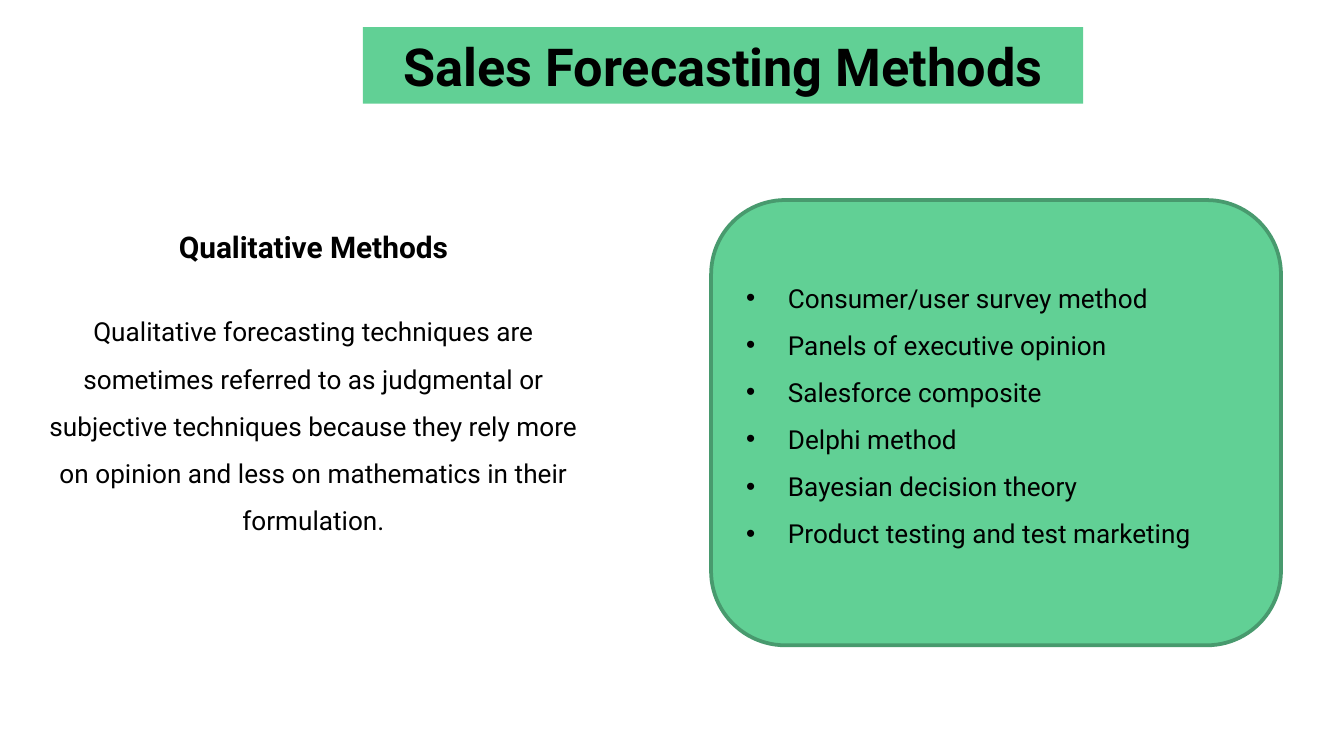
from dataclasses import dataclass

import pptx
import pptx.dml.color
import pptx.enum.shapes
import pptx.enum.text
import pptx.oxml
import pptx.oxml.ns
import pptx.util
from pptx.util import Cm

COLORS = {"green": "61D095", "dark_green": "489A6E", "text": "000000"}
FONT = "Roboto"
ALIGN = pptx.enum.text.PP_ALIGN
ANCHOR = pptx.enum.text.MSO_ANCHOR


@dataclass
class Box:
    left: float
    top: float
    width: float
    height: float

    def lengths(self) -> tuple:
        return Cm(self.left), Cm(self.top), Cm(self.width), Cm(self.height)


@dataclass
class TextStyle:
    size: int
    bold: bool = False
    align: ALIGN = ALIGN.CENTER
    line_spacing: float = 1.0
    bullet_indent: float = 0.0
    inset: tuple[float, float] = (0.25, 0.13)


def rgb(name: str) -> pptx.dml.color.RGBColor:
    return pptx.dml.color.RGBColor.from_string(COLORS[name])


def place(shape, box: Box) -> None:
    shape.left, shape.top, shape.width, shape.height = box.lengths()


def add_bullet(paragraph, indent: float) -> None:
    properties = paragraph._p.get_or_add_pPr()
    properties.set("marL", str(Cm(indent)))
    properties.set("indent", str(-Cm(indent)))
    namespace = pptx.oxml.ns.nsdecls("a")
    for xml in (
        f'<a:buClr {namespace}><a:srgbClr val="{COLORS["text"]}"/></a:buClr>',
        f'<a:buFont {namespace} typeface="Arial"/>',
        f'<a:buChar {namespace} char="•"/>',
    ):
        properties.append(pptx.oxml.parse_xml(xml))


def write(shape, text: str, style: TextStyle, anchor: ANCHOR = ANCHOR.TOP) -> None:
    frame = shape.text_frame
    frame.text = text
    frame.word_wrap = True
    frame.auto_size = pptx.enum.text.MSO_AUTO_SIZE.NONE
    frame.vertical_anchor = anchor
    frame.margin_left = frame.margin_right = Cm(style.inset[0])
    frame.margin_top = frame.margin_bottom = Cm(style.inset[1])
    for paragraph in frame.paragraphs:
        paragraph.alignment = style.align
        paragraph.line_spacing = style.line_spacing
        paragraph.space_before = pptx.util.Pt(0)
        if style.bullet_indent:
            add_bullet(paragraph, style.bullet_indent)
        for run in paragraph.runs:
            run.font.name = FONT
            run.font.size = pptx.util.Pt(style.size)
            run.font.bold = style.bold
            run.font.color.rgb = rgb("text")


def add_text(slide, box: Box, text: str, style: TextStyle) -> None:
    write(slide.shapes.add_textbox(*box.lengths()), text, style)


def add_panel(slide, box: Box) -> None:
    panel = slide.shapes.add_shape(
        pptx.enum.shapes.MSO_SHAPE.ROUNDED_RECTANGLE, *box.lengths())
    panel.shadow.inherit = False
    panel.fill.solid()
    panel.fill.fore_color.rgb = rgb("green")
    panel.line.color.rgb = rgb("dark_green")
    panel.line.width = pptx.util.Pt(2)
    # Keep the panel behind the list placeholder
    slide.shapes._spTree.insert(2, panel._element)


METHODS = [
    "Consumer/user survey method",
    "Panels of executive opinion",
    "Salesforce composite",
    "Delphi method",
    "Bayesian decision theory",
    "Product testing and test marketing",
]
DESCRIPTION = (
    "Qualitative forecasting techniques are sometimes referred to as "
    "judgmental or subjective techniques because they rely more on opinion "
    "and less on mathematics in their formulation."
)


def main() -> None:
    presentation = pptx.Presentation()
    presentation.slide_width, presentation.slide_height = Cm(25.4), Cm(14.28)
    slide = presentation.slides.add_slide(presentation.slide_layouts[1])

    # Title banner
    title = slide.shapes.title
    place(title, Box(6.86, 0.51, 13.61, 1.45))
    title.fill.solid()
    title.fill.fore_color.rgb = rgb("green")
    write(title, "Sales Forecasting Methods", TextStyle(28, bold=True), ANCHOR.MIDDLE)

    # Description on the left
    add_text(slide, Box(2.9, 4.19, 6.05, 0.94), "Qualitative Methods",
             TextStyle(16, bold=True))
    add_text(slide, Box(0.58, 5.54, 10.69, 4.65), DESCRIPTION,
             TextStyle(14, line_spacing=1.5))

    # List of methods on the right
    add_panel(slide, Box(13.44, 3.78, 10.77, 8.41))
    methods = slide.placeholders[1]
    place(methods, Box(14.1, 5.03, 9.45, 5.4))
    write(methods, "\n".join(METHODS),
          TextStyle(14, align=ALIGN.LEFT, line_spacing=1.5,
                    bullet_indent=0.79, inset=(0, 0)))

    presentation.save("out.pptx")


if __name__ == "__main__":
    main()
